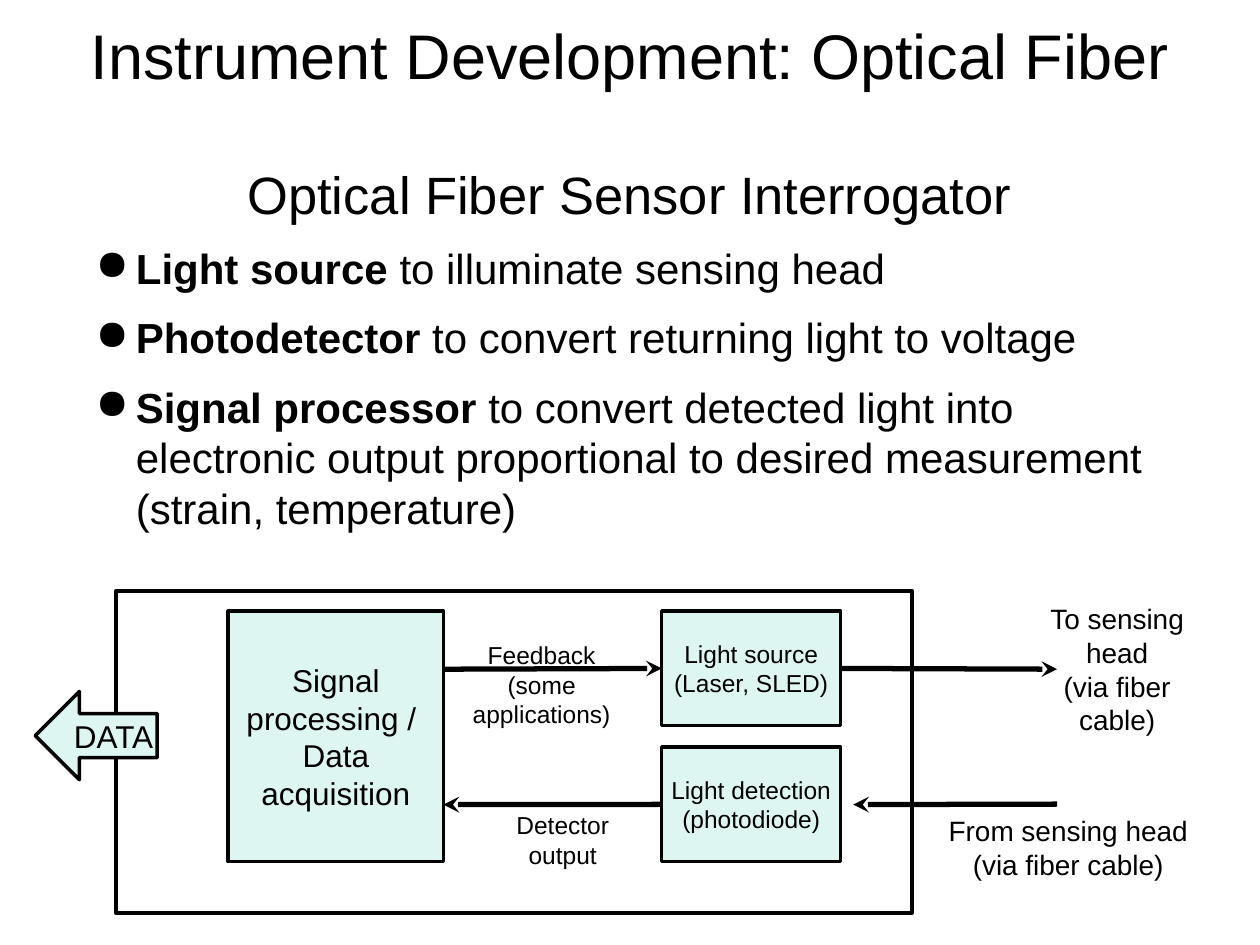
from dataclasses import dataclass

from lxml.etree import SubElement as Sub
from pptx import Presentation
from pptx.dml.color import RGBColor as Rgb
from pptx.enum.shapes import MSO_CONNECTOR as Conn, MSO_SHAPE as Form
from pptx.enum.text import MSO_ANCHOR as Anchor, PP_ALIGN as Align
from pptx.oxml.ns import qn
from pptx.util import Cm, Pt

INK = {"text": "000000", "paper": "FFFFFF", "mint": "DEF6F1"}
FONT = "Arial"


@dataclass
class Area:
    x: float
    y: float
    w: float
    h: float

    def cm(self) -> tuple:
        return Cm(self.x), Cm(self.y), Cm(self.w), Cm(self.h)


@dataclass
class Block:
    area: Area
    fill: str
    lines: tuple = ()
    size: int = 14
    form: int = Form.RECTANGLE


@dataclass
class Label:
    area: Area
    lines: tuple
    size: int


@dataclass
class Arrow:
    start: tuple
    end: tuple
    src: str = ""   # block joined at the start
    src_side: int = 0
    dst: str = ""   # block joined at the end
    dst_side: int = 0


def color(name: str) -> Rgb:
    return Rgb.from_string(INK[name])


def style(par, size: int, align=Align.CENTER) -> None:
    par.alignment = align
    par.font.size = Pt(size)
    par.font.name = FONT
    par.font.color.rgb = color("text")


def write(frame, lines: tuple, size: int) -> None:
    frame.word_wrap = True
    for i, line in enumerate(lines):
        par = frame.add_paragraph() if i else frame.paragraphs[0]
        par.add_run().text = line
        style(par, size)


def add_label(slide, label: Label):
    frame = slide.shapes.add_textbox(*label.area.cm()).text_frame
    write(frame, label.lines, label.size)
    return frame


def add_block(slide, block: Block):
    shape = slide.shapes.add_shape(block.form, *block.area.cm())
    shape.shadow.inherit = False
    shape.fill.solid()
    shape.fill.fore_color.rgb = color(block.fill)
    shape.line.color.rgb = color("text")
    shape.line.width = Pt(2)
    frame = shape.text_frame
    frame.margin_left = frame.margin_right = Cm(0.18)
    frame.margin_top = frame.margin_bottom = Cm(0.1)
    frame.vertical_anchor = Anchor.MIDDLE
    write(frame, block.lines, block.size)
    return shape


def add_arrow(slide, arrow: Arrow, shapes: dict) -> None:
    ends = [Cm(v) for v in arrow.start + arrow.end]
    line = slide.shapes.add_connector(Conn.STRAIGHT, *ends)
    if arrow.src:
        line.begin_connect(shapes[arrow.src], arrow.src_side)
    if arrow.dst:
        line.end_connect(shapes[arrow.dst], arrow.dst_side)
    line.line.color.rgb = color("text")
    line.line.width = Pt(3)
    Sub(line.line._get_or_add_ln(), qn("a:tailEnd"), type="stealth")
    Sub(line._element.spPr, qn("a:effectLst"))


def add_point(frame, term: str, rest: str, gap: float) -> None:
    par = frame.add_paragraph()
    props = par._p.get_or_add_pPr()
    props.set("marL", str(Cm(0.97)))
    props.set("indent", str(Cm(-0.81)))
    Sub(props, qn("a:buChar"), char="●")
    par.space_before = Pt(gap)
    style(par, 24, Align.LEFT)
    for text, bold in ((term, True), (rest, False)):
        run = par.add_run()
        run.text = text
        run.font.bold = bold


TITLE = Label(Area(0, 0, 25.4, 2.21), ("Instrument Development: Optical Fiber",), 36)
BODY = Label(Area(1.52, 2.51, 22.35, 15.49), ("Optical Fiber Sensor Interrogator",), 30)
POINTS = (
    ("Light source", " to illuminate sensing head", 10),
    ("Photodetector", " to convert returning light to voltage", 10.8),
    ("Signal processor", " to convert detected light into electronic output "
     "proportional to desired measurement (strain, temperature)", 10.8),
)
BLOCKS = {
    "case": Block(Area(2.34, 11.91, 16.05, 6.5), "paper"),
    "source": Block(Area(13.34, 12.32, 3.61, 2.31), "mint",
                    ("Light source", "(Laser, SLED)")),
    "detect": Block(Area(13.34, 15.06, 3.61, 2.31), "mint",
                    ("Light detection", "(photodiode)")),
    "signal": Block(Area(4.6, 12.32, 4.34, 5.05), "mint",
                    ("Signal processing / ", "Data acquisition"), 18),
    "data": Block(Area(0.71, 13.94, 2.46, 1.78), "mint", form=Form.LEFT_ARROW),
}
ARROWS = (
    Arrow((21.31, 16.21), (17.2, 16.22)),
    Arrow((16.95, 13.47), (21.31, 13.49), src="source", src_side=3),
    Arrow((13.34, 16.22), (8.94, 16.22), src="detect", src_side=1),
    Arrow((8.94, 13.49), (13.34, 13.47), dst="source", dst_side=1),
)
LABELS = (
    Label(Area(18.59, 16.28, 5.89, 1.96), ("From sensing head", "(via fiber cable)"), 16),
    Label(Area(20.45, 12.01, 4.14, 3.45), ("To sensing head", "(via fiber cable)"), 16),
    Label(Area(9.73, 16.21, 3.23, 1.5), ("Detector output",), 14),
    Label(Area(8.94, 12.78, 3.96, 2.13), ("Feedback", "(some applications)"), 14),
    Label(Area(1.12, 14.33, 2.34, 0.86), ("DATA",), 18),
)


def main() -> None:
    deck = Presentation()
    deck.slide_width, deck.slide_height = Cm(25.4), Cm(19.05)
    slide = deck.slides.add_slide(deck.slide_layouts[6])

    # Title and bullet list
    add_label(slide, TITLE).vertical_anchor = Anchor.MIDDLE
    body = add_label(slide, BODY)
    body.paragraphs[0].line_spacing = 1.5
    for term, rest, gap in POINTS:
        add_point(body, term, rest, gap)

    # Interrogator diagram
    shapes = {name: add_block(slide, block) for name, block in BLOCKS.items()}
    for arrow in ARROWS:
        add_arrow(slide, arrow, shapes)
    for label in LABELS:
        add_label(slide, label)

    deck.save("out.pptx")


if __name__ == "__main__":
    main()
